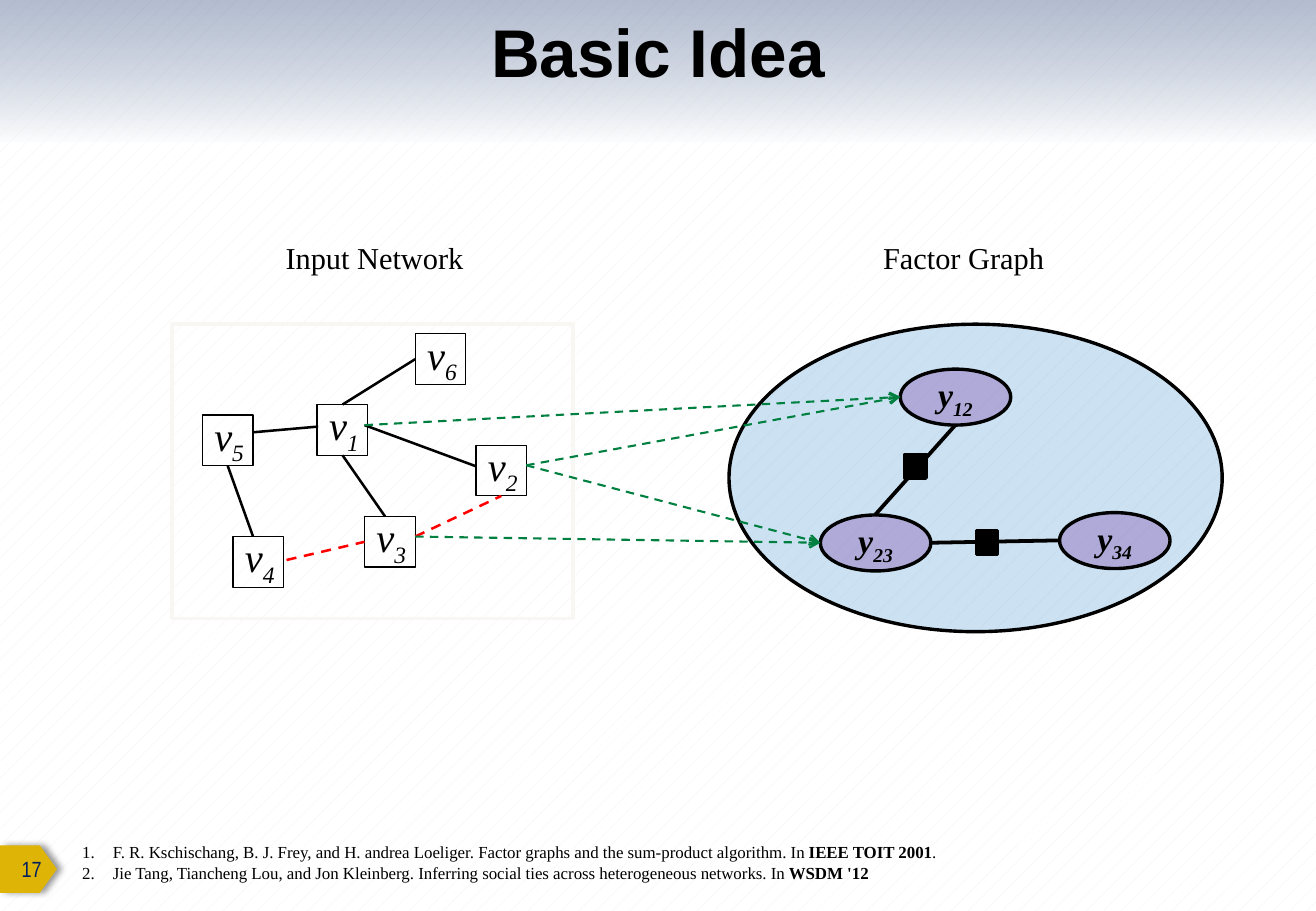
from lxml.etree import SubElement as Sub
from pptx import Presentation
from pptx.dml.color import RGBColor as Rgb
from pptx.enum.dml import MSO_LINE as Dash, MSO_PATTERN as Pattern
from pptx.enum.shapes import MSO_CONNECTOR as Link, MSO_SHAPE as Kind
from pptx.enum.text import MSO_ANCHOR as Anchor, MSO_AUTO_SIZE as Size, PP_ALIGN as Align
from pptx.oxml.ns import qn
from pptx.util import Cm, Pt

INK = {"black": "000000", "white": "FFFFFF", "dots": "F2F2F2", "gold": "DEB406",
       "navy": "002060", "mist": "F6F9FC", "frame": "F8F7F3", "red": "FF0000",
       "green": "008040", "blue": "0070C0", "violet": "7030A0"}
TOP, LEFT, BOTTOM, RIGHT = range(4)


def ink(name):
    return Rgb.from_string(INK[name])


def fade(parent, *shares):
    for color, share in zip(parent.iter(qn("a:srgbClr")), shares):
        Sub(color, qn("a:alpha"), val=str(share * 1000))


class Page:
    """Holds the slide, its serif style and the named network nodes."""

    def __init__(self, deck):
        self.slide = deck.slides.add_slide(deck.slide_layouts[6])
        self.shapes = self.slide.shapes
        self.font = "Times New Roman"
        self.nodes = {}

    def back(self):
        fill = self.slide.background.fill
        fill.patterned()
        fill.pattern = Pattern.PERCENT_5
        fill.fore_color.rgb = ink("dots")
        fill.back_color.rgb = ink("white")

    def shape(self, kind, box, fill=None, line=None, width=2, alpha=None, home=None):
        item = (home or self.shapes).add_shape(kind, *map(Cm, box))
        item.shadow.inherit = False
        if fill:
            item.fill.solid()
            item.fill.fore_color.rgb = ink(fill)
        else:
            item.fill.background()
        if alpha:
            fade(item.element.spPr, alpha)
        if line:
            item.line.color.rgb = ink(line)
            item.line.width = Pt(width)
        else:
            item.line.fill.background()
        return item

    def banner(self, box):
        item = self.shape(Kind.RECTANGLE, box, "mist")
        item.fill.gradient()
        item.fill.gradient_angle = 270
        for stop, name, place in zip(item.fill.gradient_stops, ("navy", "mist"), (0, 1)):
            stop.color.rgb = ink(name)
            stop.position = place
        fade(item.element.spPr, 30, 40)

    def badge(self, box):
        item = self.shape(Kind.PENTAGON, box, "gold")
        item.adjustments[0] = 0.36
        glow = Sub(item.element.spPr.find(qn("a:effectLst")), qn("a:outerShdw"),
                   blurRad=str(Pt(4)), dist=str(Pt(3)), dir="0", algn="l", rotWithShape="0")
        Sub(glow, qn("a:srgbClr"), val=INK["black"])
        fade(glow, 40)

    def style(self, para, size, color="black", font=None, bold=None, slant=None, align=Align.LEFT):
        para.alignment = align
        para.font.name = font or self.font
        para.font.size = Pt(size)
        para.font.color.rgb = ink(color)
        para.font.bold = bold
        para.font.italic = slant

    def text(self, box, words, size, home=None, wrap=True, anchor=Anchor.TOP, **look):
        frame = (home or self.shapes).add_textbox(*map(Cm, box)).text_frame
        frame.word_wrap = wrap
        frame.auto_size = Size.NONE
        frame.vertical_anchor = anchor
        para = frame.paragraphs[0]
        para.add_run().text = words
        self.style(para, size, **look)
        return frame

    def sub(self, para, words):
        run = para.add_run()
        run.text = words
        run.font._element.set("baseline", "-25000")

    def node(self, name, x, y):
        home = self.shapes.add_group_shape().shapes
        self.nodes[name] = self.shape(Kind.RECTANGLE, (x, y, 1.06, 1.06), None, "black", 0.75,
                                      home=home)
        frame = self.text((x, y - 0.21, 1.41, 1.27), "v", 24, home, False, slant=True)
        self.sub(frame.paragraphs[0], name)

    def label(self, name, x, y):
        item = self.shape(Kind.OVAL, (x, y, 2.31, 1.17), "violet", "black", alpha=31)
        frame = item.text_frame
        frame.vertical_anchor = Anchor.MIDDLE
        para = frame.paragraphs[0]
        para.add_run().text = "y"
        self.sub(para, name)
        self.style(para, 20, bold=True, slant=True, align=Align.CENTER)

    def link(self, start, end, color="black", width=1.5, dash=False, arrow=False):
        spots = [(0, 0) if p[0] in self.nodes else p for p in (start, end)]
        item = self.shapes.add_connector(Link.STRAIGHT, *map(Cm, spots[0] + spots[1]))
        for spot, join in ((start, item.begin_connect), (end, item.end_connect)):
            if spot[0] in self.nodes:
                join(self.nodes[spot[0]], spot[1])
        item.line.color.rgb = ink(color)
        item.line.width = Pt(width)
        if dash:
            item.line.dash_style = Dash.DASH
        props = item.element.spPr
        if arrow:
            Sub(props.find(qn("a:ln")), qn("a:tailEnd"), type="arrow")
        Sub(props, qn("a:effectLst"))

    def sources(self, box, rows):
        frame = self.shapes.add_textbox(*map(Cm, box)).text_frame
        frame.word_wrap = True
        for row, parts in enumerate(rows):
            para = frame.add_paragraph() if row else frame.paragraphs[0]
            self.style(para, 10)
            for spot, words in enumerate(parts):
                run = para.add_run()
                run.text = words
                run.font.bold = spot == 1
            props = para._p.get_or_add_pPr()
            props.set("marL", str(Cm(0.64)))
            props.set("indent", str(Cm(-0.64)))
            props.insert(0, Sub(props, qn("a:buAutoNum"), type="arabicPeriod"))


def main():
    deck = Presentation()
    deck.slide_width, deck.slide_height = Cm(27.51), Cm(19.05)
    page = Page(deck)
    page.back()
    page.badge((0, 17.68, 1.19, 0.99))
    page.banner((0, 0, 27.51, 2.97))
    page.text((-0.25, 17.68, 1.37, 0.97), "17", 13, anchor=Anchor.MIDDLE,
              color="navy", font="Arial Narrow", align=Align.RIGHT)
    page.text((0, 0, 27.51, 2.13), "Basic Idea", 40, anchor=Anchor.MIDDLE,
              font="Arial", bold=True, align=Align.CENTER)
    for x, words in ((5.72, "Input Network"), (18.21, "Factor Graph")):
        page.text((x, 4.88, 5.08, 1.07), words, 18)

    page.shape(Kind.RECTANGLE, (3.6, 6.78, 8.38, 6.15), None, "frame")
    for name, x, y in (("1", 6.63, 8.46), ("2", 9.95, 9.31), ("3", 7.62, 10.8),
                       ("4", 4.87, 11.22), ("5", 4.23, 8.68), ("6", 8.68, 6.98)):
        page.node(name, x, y)
    one, two, three = (7.62, 8.89), (11, 9.73), (8.68, 11.22)
    for start, end in ((("6", LEFT), ("1", TOP)), (one, (9.95, 9.75)),
                       ((8.05, 10.8), ("1", BOTTOM)), (("5", BOTTOM), (5.29, 11.22)),
                       ((6.65, 8.92), (5.3, 9.04))):
        page.link(start, end)
    for start, end in (((5.99, 11.71), ("3", LEFT)), (three, ("2", BOTTOM))):
        page.link(start, end, "red", dash=True)

    page.shape(Kind.OVAL, (15.24, 6.78, 10.31, 6.43), "blue", "black", alpha=20)
    for name, x, y in (("12", 18.82, 7.72), ("34", 22.15, 10.72), ("23", 17.15, 10.77)):
        page.label(name, x, y)
    high, low = (18.82, 8.3), (17.15, 11.35)
    for start, end in ((one, high), (two, high), (two, low), (three, low)):
        page.link(start, end, "green", 1.25, dash=True, arrow=True)
    for start, end in (((19.97, 8.89), (18.29, 10.77)), ((22.15, 11.3), (19.44, 11.35))):
        page.link(start, end, width=2.25)
    for x, y in ((18.92, 9.5), (20.42, 11.1)):
        page.shape(Kind.RECTANGLE, (x, y, 0.44, 0.5), "black", "black")

    page.sources((1.47, 17.48, 25.9, 1.12), (
        ("F. R. Kschischang, B. J. Frey, and H. andrea Loeliger. Factor graphs and the "
         "sum-product algorithm. In ", "IEEE TOIT 2001", "."),
        ("Jie Tang, Tiancheng Lou, and Jon Kleinberg. Inferring social ties across "
         "heterogeneous networks. In ", "WSDM '12")))
    deck.save("out.pptx")


if __name__ == "__main__":
    main()
